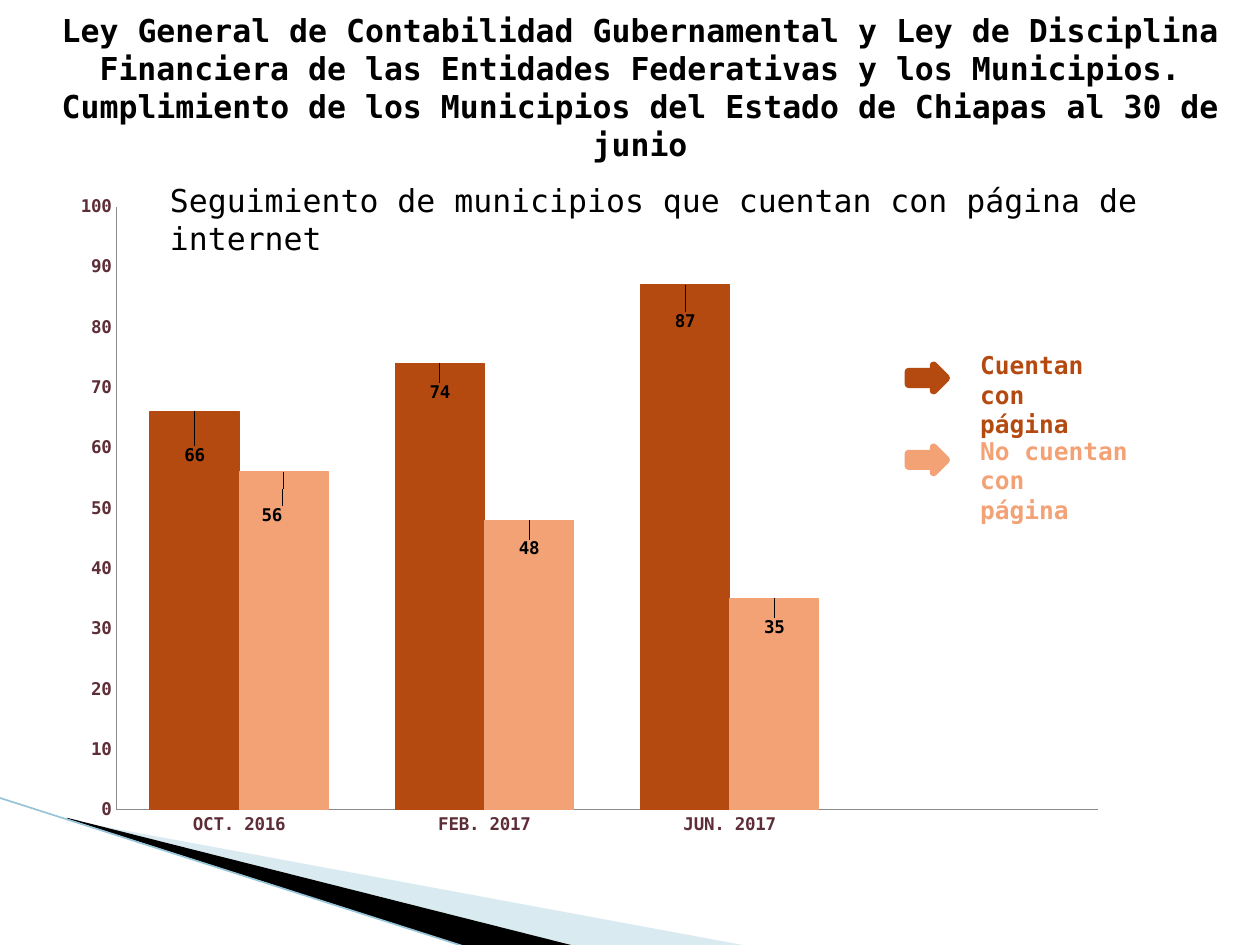
from lxml import etree
from pptx import Presentation, util as u
from pptx.chart.data import CategoryChartData
from pptx.dml.color import RGBColor
from pptx.enum import chart as ch, shapes, text
from pptx.oxml import parse_xml
from pptx.oxml.ns import nsdecls, qn

COLORS = {
    "ink": "000000", "axis": "5E2D37", "axis_line": "8B8B8B",
    "with_page": "B54A10", "without_page": "F3A276",
    "wedge": "A0CBDC", "edge": "97C5D8",
}
FONT = "DejaVu Sans Mono"
COLS, ROWS = 100, 75  # grid cells across and down the slide


class Deck:
    def __init__(self):
        self.prs = Presentation()
        self.prs.slide_width, self.prs.slide_height = u.Inches(10), u.Inches(7.5)
        self.slide = self.prs.slides.add_slide(self.prs.slide_layouts[5])
        self.shapes = self.slide.shapes

    def cells(self, *lengths):
        """Turn alternating columns and rows into slide lengths."""
        units = (self.prs.slide_width / COLS, self.prs.slide_height / ROWS)
        return [round(n * units[i % 2]) for i, n in enumerate(lengths)]

    def color(self, name):
        return RGBColor.from_string(COLORS[name])

    def font(self, font, size, color, bold=False):
        font.name, font.size, font.bold = FONT, u.Pt(size), bold
        font.color.rgb = self.color(color)

    def paint(self, shape, color, alpha=None, line=None):
        shape.shadow.inherit = False
        shape.fill.solid()
        shape.fill.fore_color.rgb = self.color(color)
        if alpha:
            rgb = shape.fill._xPr.find(".//" + qn("a:srgbClr"))
            etree.SubElement(rgb, qn("a:alpha")).set("val", str(alpha * 1000))
        if line:
            shape.line.color.rgb = self.color(color)
            shape.line.width = u.Pt(line)
        else:
            shape.line.fill.background()

    def title(self, words, box):
        heading = self.shapes.title
        heading.left, heading.top, heading.width, heading.height = self.cells(*box)
        frame = heading.text_frame
        frame.auto_size = text.MSO_AUTO_SIZE.NONE
        frame.vertical_anchor = text.MSO_ANCHOR.MIDDLE
        paragraph = frame.paragraphs[0]
        paragraph.text = words
        paragraph.alignment = text.PP_ALIGN.CENTER
        for run in paragraph.runs:
            self.font(run.font, 18, "ink", True)

    def label(self, words, box, size, color, bold=False):
        frame = self.shapes.add_textbox(*self.cells(*box)).text_frame
        frame.word_wrap = True
        frame.text = words
        for paragraph in frame.paragraphs:
            for run in paragraph.runs:
                self.font(run.font, size, color, bold)

    def polygon(self, points, color, alpha=None):
        corners = [self.cells(*point) for point in points]
        builder = self.shapes.build_freeform(*corners[0])
        builder.add_line_segments(corners[1:])
        self.paint(builder.convert_to_shape(), color, alpha)

    def line(self, ends, color, width):
        edge = self.shapes.add_connector(shapes.MSO_CONNECTOR.STRAIGHT, *self.cells(*ends))
        edge.line.color.rgb = self.color(color)
        edge.line.width = u.Pt(width)
        etree.SubElement(edge._element.spPr, qn("a:effectLst"))

    def arrow(self, box, color):
        marker = self.shapes.add_shape(shapes.MSO_SHAPE.RIGHT_ARROW, *self.cells(*box))
        self.paint(marker, color, line=4.33)

    def columns(self, categories, series, box, plot_area):
        """series: (name, color, values, label shifts as shares of the chart)."""
        data = CategoryChartData()
        data.categories = categories
        for name, _, values, _ in series:
            data.add_series(name, values)
        chart = self.shapes.add_chart(
            ch.XL_CHART_TYPE.COLUMN_CLUSTERED, *self.cells(*box), data).chart
        chart.has_legend = chart.has_title = False
        self.font(chart.font, 10, "ink")

        # Axes
        for axis in (chart.category_axis, chart.value_axis):
            axis.has_major_gridlines = False
            axis.major_tick_mark = axis.minor_tick_mark = ch.XL_TICK_MARK.NONE
            axis.format.line.color.rgb = self.color("axis_line")
            axis.format.line.width = u.Pt(0.75)
            self.font(axis.tick_labels.font, 10, "axis", True)
        chart.value_axis.minimum_scale, chart.value_axis.maximum_scale = 0, 100
        chart.value_axis.major_unit = 10

        # Columns and their values
        plot = chart.plots[0]
        plot.gap_width, plot.overlap, plot.vary_by_categories = 75, 0, False
        for bars, (_, color, _, shifts) in zip(plot.series, series):
            bars.format.fill.solid()
            bars.format.fill.fore_color.rgb = self.color(color)
            bars.format.line.color.rgb = self.color(color)
            bars.format.line.width = u.Pt(0.75)
            bars.data_labels.show_value = True
            self.font(bars.data_labels.font, 10, "ink", True)
            for i, shift in enumerate(shifts):
                value = bars.points[i].data_label
                self.font(value.font, 10, "ink", True)
                value.position = ch.XL_LABEL_POSITION.OUTSIDE_END
                mark = bars._element.xpath(f"c:dLbls/c:dLbl[c:idx/@val='{i}']")[0]
                for old in mark.findall(qn("c:layout")):
                    mark.remove(old)
                mark.insert(1, self.layout(zip("xy", shift)))

        # Plot area
        area = chart._chartSpace.chart.plotArea
        for old in area.findall(qn("c:layout")):
            area.remove(old)
        modes = [("layoutTarget", "inner"), ("xMode", "edge"), ("yMode", "edge")]
        area.insert(0, self.layout(modes + list(zip("xywh", plot_area))))

    def layout(self, settings):
        inner = "".join(f'<c:{key} val="{val}"/>' for key, val in settings)
        return parse_xml(f'<c:layout {nsdecls("c")}><c:manualLayout>{inner}'
                         "</c:manualLayout></c:layout>")


def main():
    deck = Deck()

    # Corner decoration
    deck.polygon([(5.5, 65.1), (59.5, 75.1), (45.6, 75.1), (5.5, 65)], "wedge", 40)
    deck.polygon([(5.3, 64.9), (45.7, 75.1), (37.2, 75.2), (5.4, 65)], "ink")
    deck.line((-0.1, 63.3, 37.1, 75.2), "edge", 0.95)

    # Column chart
    deck.columns(
        ["OCT. 2016", "FEB. 2017", "JUN. 2017", ""],
        [("Series 1", "with_page", (66, 74, 87, None),
          [(0, 0.08), (0, 0.06), (0, 0.07)]),
         ("Series 2", "without_page", (56, 48, 35, None),
          [(-0.01, 0.08), (0, 0.06), (0, 0.06)])],
        (2.3, 14.1, 95.3, 57.8), (0.073, 0.04, 0.817, 0.828))

    # Legend
    legend = [("Cuentan con\npágina", "with_page", 29, 27.3, 14),
              ("No cuentan con\npágina", "without_page", 35.5, 34.1, 17.6)]
    for words, color, arrow_top, words_top, width in legend:
        deck.arrow((72.1, arrow_top, 3, 2), color)
        deck.label(words, (76.8, words_top, width, 5.7), 14, color, True)

    # Headings
    deck.title("Ley General de Contabilidad Gubernamental y Ley de Disciplina Financiera "
               "de las Entidades Federativas y los Municipios.\n"
               "Cumplimiento de los Municipios del Estado de Chiapas al 30 de junio",
               (3.3, 1.8, 95, 10.2))
    deck.label("Seguimiento de municipios que cuentan con página de internet",
               (12.5, 13.9, 80.5, 4), 18, "ink")

    deck.prs.save("out.pptx")


if __name__ == "__main__":
    main()
